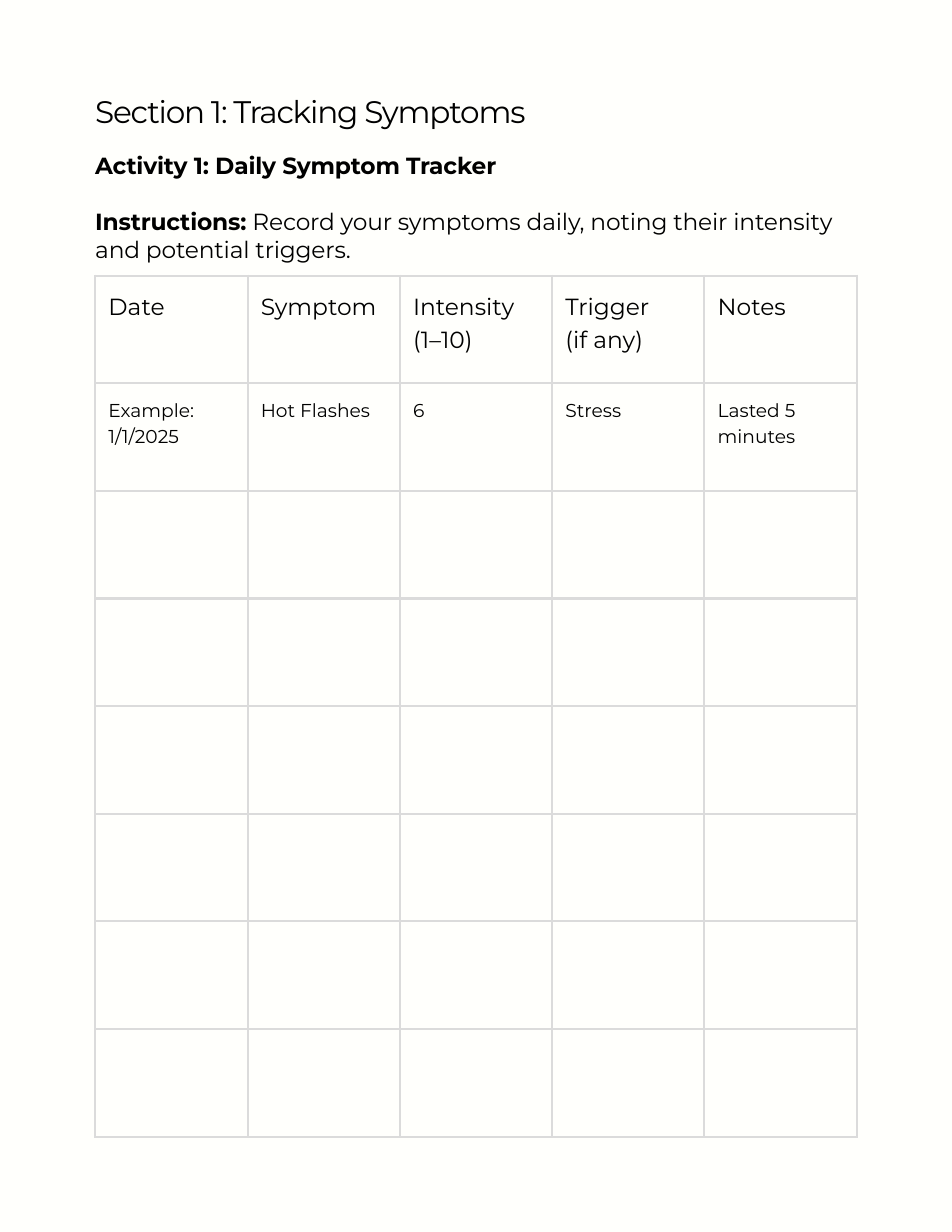
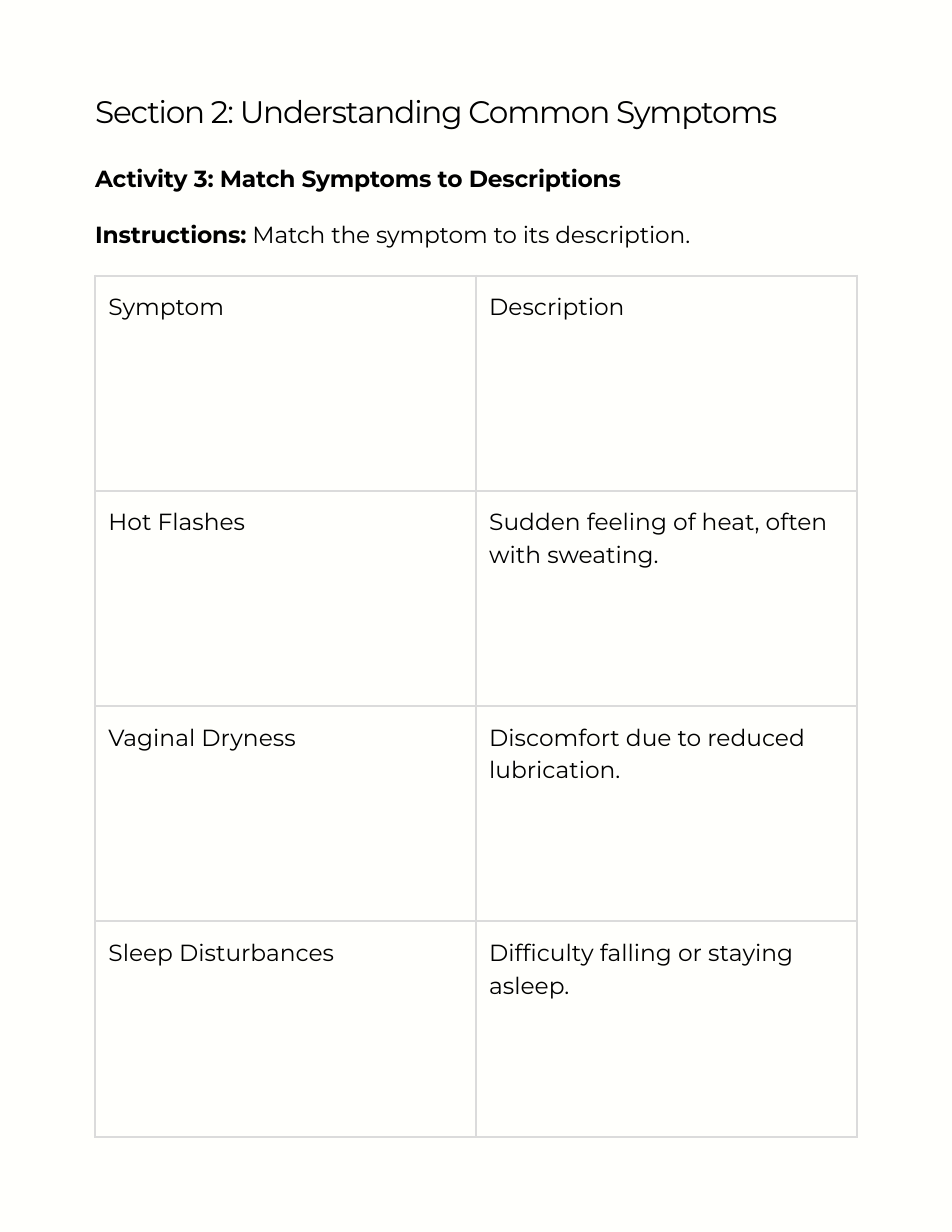
import dataclasses
import pptx
import pptx.dml.color
import pptx.enum.text
import pptx.oxml.ns
import pptx.util
from lxml import etree

Cm = pptx.util.Cm
Pt = pptx.util.Pt
qn = pptx.oxml.ns.qn


@dataclasses.dataclass(frozen=True)
class Theme:
    font: str = "Montserrat"
    paper: str = "FFFFFC"
    ink: str = "000000"
    rule: str = "DBDBDB"
    rule_width: float = 1.5
    title_size: int = 20
    body_size: int = 15
    example_size: int = 12
    heading_leading: int = 18
    cell_leading: float = 1.4
    title_tracking: float = -0.8
    body_tracking: float = -0.1


@dataclasses.dataclass(frozen=True)
class Box:
    left: float
    top: float
    width: float
    height: float

    def lengths(self):
        return [Cm(value) for value in (self.left, self.top, self.width, self.height)]


THEME = Theme()
LEFT, WIDTH = 2.16, 17.27
TITLE_BOX = Box(LEFT, 2.31, WIDTH, 0.69)
TABLE_BOX = Box(LEFT, 6.25, WIDTH, 19.53)


def style_paragraph(para, size, leading, tracking=0.0, bold=False):
    para.line_spacing = Pt(leading)
    font = para.font
    font.name = THEME.font
    font.size = Pt(size)
    font.bold = bold
    font.color.rgb = pptx.dml.color.RGBColor.from_string(THEME.ink)
    if tracking:
        para._p.pPr.find(qn("a:defRPr")).set("spc", str(round(tracking * 100)))


def add_text_frame(page, box):
    frame = page.shapes.add_textbox(*box.lengths()).text_frame
    frame.margin_left = frame.margin_right = frame.margin_top = frame.margin_bottom = 0
    frame.word_wrap = True
    frame.auto_size = pptx.enum.text.MSO_AUTO_SIZE.SHAPE_TO_FIT_TEXT
    return frame


def add_title(page, box, title):
    para = add_text_frame(page, box).paragraphs[0]
    para.text = title
    style_paragraph(para, THEME.title_size, THEME.heading_leading, THEME.title_tracking)


def add_activity(page, box, activity, instructions):
    frame = add_text_frame(page, box)
    heading = frame.paragraphs[0]
    heading.text = activity
    style_paragraph(heading, THEME.body_size, THEME.heading_leading, THEME.body_tracking, bold=True)

    para = frame.add_paragraph()
    para.space_before = Pt(THEME.heading_leading)
    style_paragraph(para, THEME.body_size, THEME.heading_leading, THEME.body_tracking)
    for text, bold in (("Instructions:", True), (" " + instructions, False)):
        span = para.add_run()
        span.text = text
        span.font.bold = bold


def add_borders(cell):
    properties = cell._tc.get_or_add_tcPr()
    for position, side in enumerate(("lnL", "lnR", "lnT", "lnB")):
        line = etree.Element(qn("a:" + side), w=str(Pt(THEME.rule_width)))
        fill = etree.SubElement(line, qn("a:solidFill"))
        etree.SubElement(fill, qn("a:srgbClr"), val=THEME.rule)
        properties.insert(position, line)


def fill_cell(cell, text, size):
    cell.fill.background()
    add_borders(cell)
    cell.margin_left = cell.margin_right = cell.margin_top = cell.margin_bottom = Cm(0.3)
    cell.text = text
    for para in cell.text_frame.paragraphs:
        style_paragraph(para, size, size * THEME.cell_leading)


def add_worksheet(page, box, rows, row_sizes):
    column_count = len(rows[0])
    table = page.shapes.add_table(len(rows), column_count, *box.lengths()).table
    table.first_row = False
    table.horz_banding = False
    for column in table.columns:
        column.width = Cm(box.width / column_count)
    for row, texts, size in zip(table.rows, rows, row_sizes):
        row.height = Cm(box.height / len(rows))
        for cell, text in zip(row.cells, texts):
            fill_cell(cell, text, size)


def add_page(deck, title, activity_box, activity, instructions, rows, row_sizes):
    page = deck.slides.add_slide(deck.slide_layouts[6])
    background = page.background.fill
    background.solid()
    background.fore_color.rgb = pptx.dml.color.RGBColor.from_string(THEME.paper)
    add_title(page, TITLE_BOX, title)
    add_activity(page, activity_box, activity, instructions)
    add_worksheet(page, TABLE_BOX, rows, row_sizes)


def main():
    deck = pptx.Presentation()
    deck.slide_width, deck.slide_height = Cm(21.59), Cm(27.94)

    tracker = [
        ["Date", "Symptom", "Intensity (1–10)", "Trigger\n(if any)", "Notes"],
        ["Example: 1/1/2025", "Hot Flashes", "6", "Stress", "Lasted 5 minutes"],
    ] + [[""] * 5] * 6
    add_page(
        deck,
        "Section 1: Tracking Symptoms",
        Box(LEFT, 3.43, WIDTH, 2.36),
        "Activity 1: Daily Symptom Tracker",
        "Record your symptoms daily, noting their intensity and potential triggers.",
        tracker,
        [THEME.body_size] + [THEME.example_size] * 7,
    )

    matches = [
        ["Symptom", "Description"],
        ["Hot Flashes", "Sudden feeling of heat, often with sweating."],
        ["Vaginal Dryness", "Discomfort due to reduced lubrication."],
        ["Sleep Disturbances", "Difficulty falling or staying asleep."],
    ]
    add_page(
        deck,
        "Section 2: Understanding Common Symptoms",
        Box(LEFT, 3.73, WIDTH, 1.78),
        "Activity 3: Match Symptoms to Descriptions",
        "Match the symptom to its description.",
        matches,
        [THEME.body_size] * len(matches),
    )
    deck.save("out.pptx")


if __name__ == "__main__":
    main()
